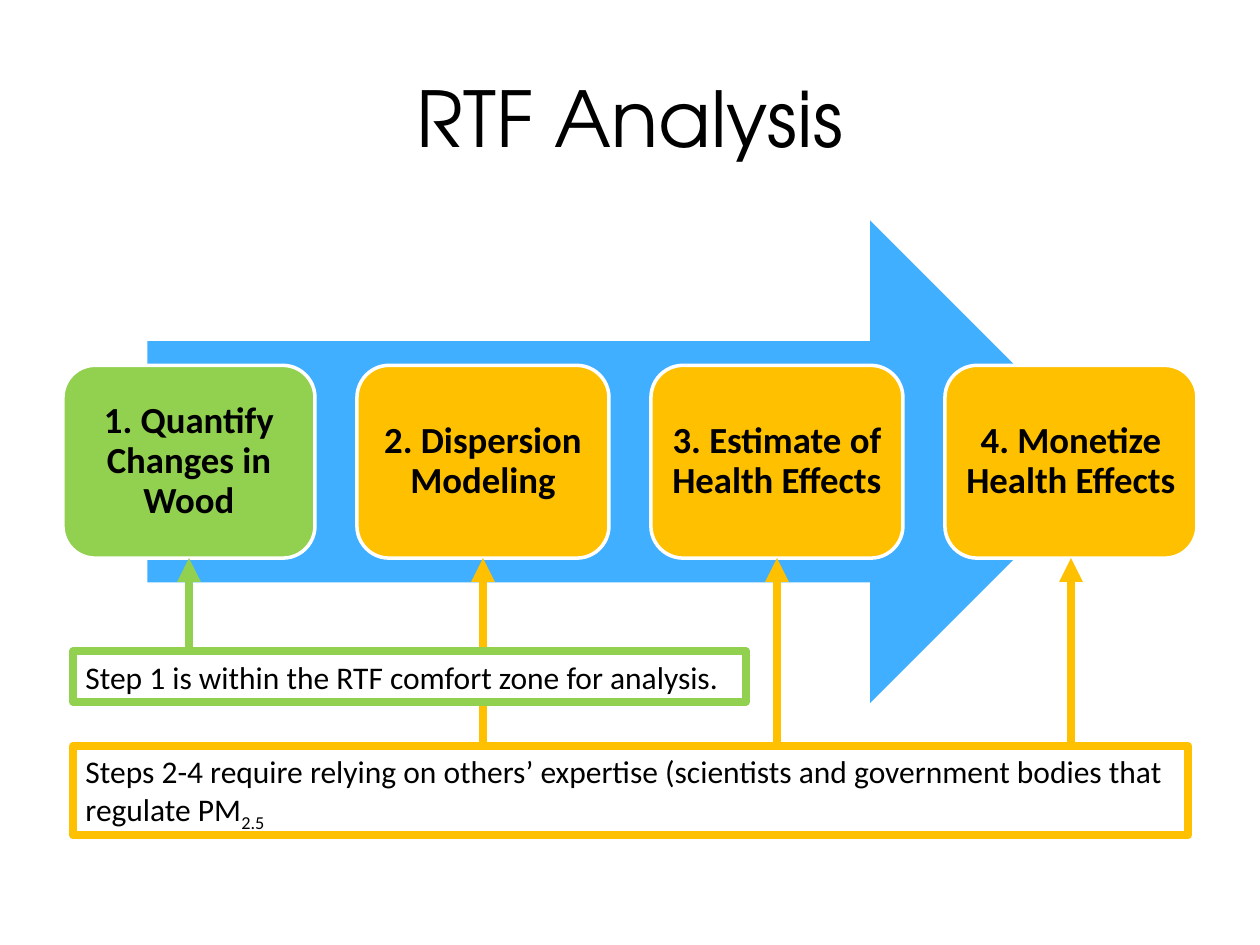
from dataclasses import dataclass

from lxml import etree
from pptx import Presentation
from pptx.dml.color import RGBColor
from pptx.enum.shapes import MSO_CONNECTOR, MSO_SHAPE
from pptx.enum.text import MSO_ANCHOR, PP_ALIGN
from pptx.oxml.ns import qn
from pptx.util import Pt

PX = 9144  # EMU per px, 100 px to the inch
ARROW, ROUNDED, RECT = MSO_SHAPE.RIGHT_ARROW, MSO_SHAPE.ROUNDED_RECTANGLE, MSO_SHAPE.RECTANGLE
STRAIGHT = MSO_CONNECTOR.STRAIGHT
TOP, MIDDLE = MSO_ANCHOR.TOP, MSO_ANCHOR.MIDDLE
LEFT, CENTER = PP_ALIGN.LEFT, PP_ALIGN.CENTER
BOTTOM_SIDE = 2


@dataclass(frozen=True)
class Theme:
    title_font: str = "TeX Gyre Adventor"
    body_font: str = "Calibri"
    title_size: int = 44
    step_size: int = 21
    note_size: int = 18
    ink: str = "000000"
    paper: str = "FFFFFF"
    flow: str = "40AFFF"
    comfort: str = "92D050"
    expert: str = "FFC000"
    step_line: float = 2
    note_line: float = 4.5


THEME = Theme()
STEPS = [
    ("1. Quantify Changes in Wood", THEME.comfort),
    ("2. Dispersion Modeling", THEME.expert),
    ("3. Estimate of Health Effects", THEME.expert),
    ("4. Monetize Health Effects", THEME.expert),
]


def emu(*lengths):
    return [round(length * PX) for length in lengths]


def set_font(para, name, size, bold=False):
    para.font.name = name
    para.font.size = Pt(size)
    para.font.bold = bold
    para.font.color.rgb = RGBColor.from_string(THEME.ink)


def set_line(line, color, width):
    line.color.rgb = RGBColor.from_string(color)
    line.width = Pt(width)


def add_block(page, preset, box, fill=None, line=None, width=0):
    """Add a flat shape; without fill or line that part stays empty."""
    block = page.shapes.add_shape(preset, *emu(*box))
    block.shadow.inherit = False
    if fill:
        block.fill.solid()
        block.fill.fore_color.rgb = RGBColor.from_string(fill)
    else:
        block.fill.background()
    if line:
        set_line(block.line, line, width)
    else:
        block.line.fill.background()
    return block


def add_title(page, box, text):
    title = page.shapes.title
    title.left, title.top, title.width, title.height = emu(*box)
    frame = title.text_frame
    frame.text = text
    frame.vertical_anchor = MIDDLE
    para = frame.paragraphs[0]
    para.alignment = CENTER
    set_font(para, THEME.title_font, THEME.title_size)


def add_process(page, box):
    """Place the big arrow and the evenly spread steps over it; return the steps."""
    left, top, width, height = box
    step_width, step_height = width * 2 // 9, height * 2 // 5
    pitch = (width - step_width) / (len(STEPS) - 1)
    add_block(page, ARROW, (left + 67, top, width * 85 // 100, height), THEME.flow)
    steps = []
    for index, (text, color) in enumerate(STEPS):
        place = (left + index * pitch, top + (height - step_height) / 2, step_width, step_height)
        step = add_block(page, ROUNDED, place, color, THEME.paper, THEME.step_line)
        frame = step.text_frame
        frame.word_wrap = True
        frame.vertical_anchor = MIDDLE
        frame.margin_left, frame.margin_right = emu(2, 2)
        frame.text = text
        para = frame.paragraphs[0]
        para.alignment = CENTER
        para.line_spacing = 0.9
        set_font(para, THEME.body_font, THEME.step_size, bold=True)
        steps.append(step)
    return steps


def add_pointer(page, note, step, color):
    """Draw an arrow from the note's top edge straight up to the step."""
    center = step.left + step.width // 2
    pointer = page.shapes.add_connector(STRAIGHT, center, note.top, center, step.top + step.height)
    pointer.end_connect(step, BOTTOM_SIDE)
    set_line(pointer.line, color, THEME.note_line)
    etree.SubElement(pointer.line._get_or_add_ln(), qn("a:tailEnd"), type="triangle")
    etree.SubElement(pointer._element.spPr, qn("a:effectLst"))


def add_note(page, box, lines, color, steps, fill=None):
    """Add an outlined note pointing to its steps; a line is (text, subscript)."""
    note = add_block(page, RECT, box, fill, color, THEME.note_line)
    frame = note.text_frame
    frame.word_wrap = True
    frame.vertical_anchor = TOP
    for index, (text, subscript) in enumerate(lines):
        para = frame.add_paragraph() if index else frame.paragraphs[0]
        para.alignment = LEFT
        set_font(para, THEME.body_font, THEME.note_size)
        para.add_run().text = text
        if subscript:
            span = para.add_run()
            span.text = subscript
            span.font._element.set("baseline", "-25000")
    for step in steps:
        add_pointer(page, note, step, color)


def main():
    deck = Presentation()
    deck.slide_width, deck.slide_height = emu(1000, 750)
    page = deck.slides.add_slide(deck.slide_layouts[5])
    add_title(page, (50, 30, 900, 125), "RTF Analysis")
    steps = add_process(page, (50, 175, 900, 383))
    expert_lines = [
        ("Steps 2-4 require relying on others’ expertise (scientists and government bodies that", ""),
        ("regulate PM", "2.5"),
    ]
    add_note(page, (58, 592, 885, 71), expert_lines, THEME.expert, steps[1:])
    comfort_lines = [("Step 1 is within the RTF comfort zone for analysis.", "")]
    add_note(page, (58, 517, 534, 40), comfort_lines, THEME.comfort, steps[:1], THEME.paper)
    deck.save("out.pptx")


if __name__ == "__main__":
    main()
